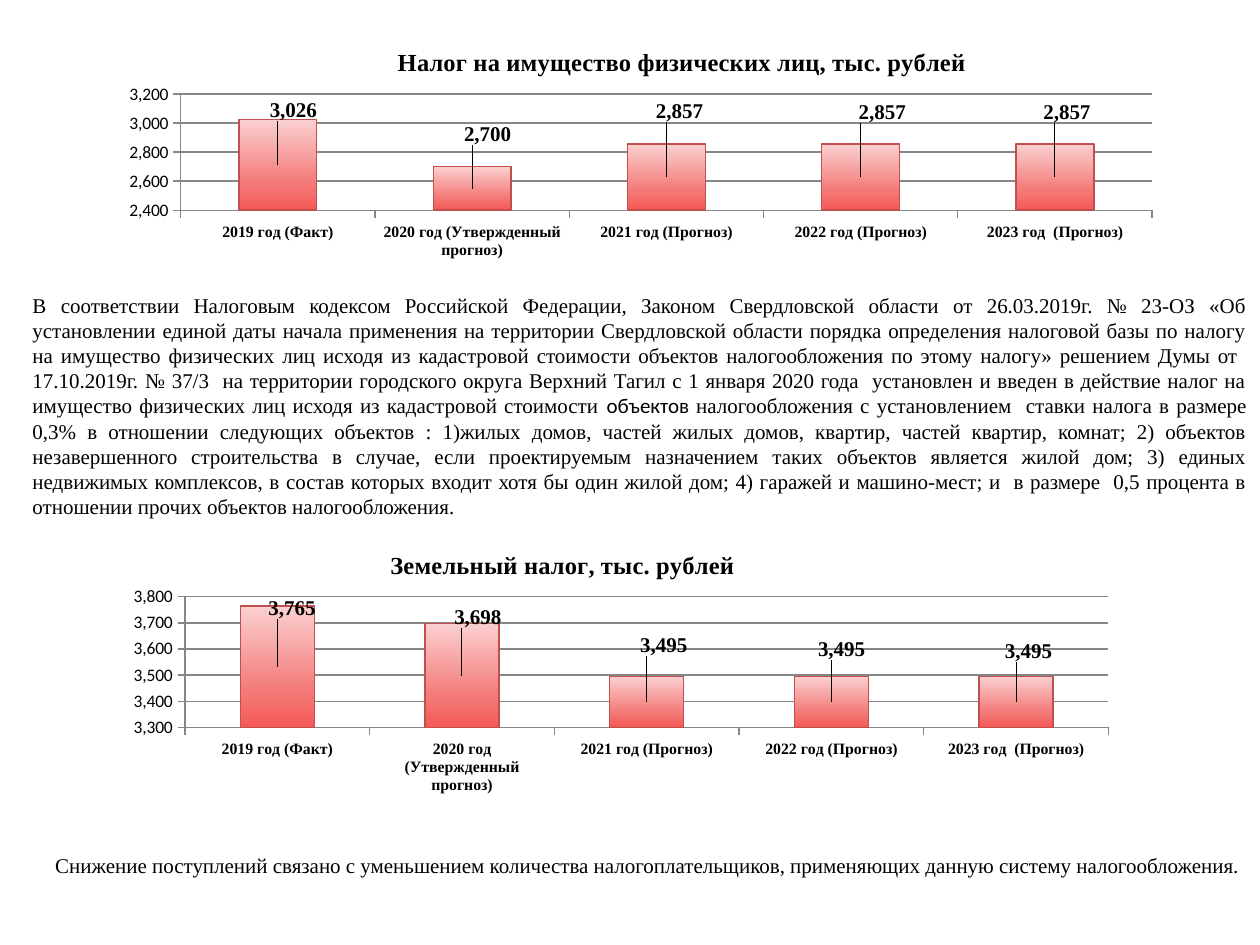
from lxml import etree
from pptx import Presentation
from pptx.chart.data import CategoryChartData
from pptx.dml.color import RGBColor
from pptx.enum import chart as ch, text
from pptx.oxml import parse_xml
from pptx.oxml.ns import nsdecls, qn
from pptx.util import Pt

BLACK = RGBColor(0, 0, 0)
BAR_LINE = RGBColor(0xC0, 0x50, 0x4D)
GRID = RGBColor(0x86, 0x86, 0x86)
BAR_STOPS = [
    (0, RGBColor(0xFB, 0xD0, 0xD0)),
    (72, RGBColor(0xF3, 0x78, 0x76)),
    (100, RGBColor(0xF5, 0x59, 0x56)),
]
SERIF = "Times New Roman"
SANS = "Calibri"
YEARS = [
    "2019 год (Факт)",
    "2020 год (Утвержденный прогноз)",
    "2021 год (Прогноз)",
    "2022 год (Прогноз)",
    "2023 год  (Прогноз)",
]
LAW_RUNS = [
    ("В соответствии Налоговым кодексом Российской Федерации, Законом Свердловской области "
     "от 26.03.2019г. № 23-ОЗ «Об установлении единой даты начала применения на территории "
     "Свердловской области порядка определения налоговой базы по налогу на имущество физических "
     "лиц исходя из кадастровой стоимости объектов налогообложения по этому налогу» решением "
     "Думы от  17.10.2019г. № 37/3  на территории городского округа Верхний Тагил с 1 января "
     "2020 года  установлен и введен в действие налог на имущество физических лиц исходя из "
     "кадастровой стоимости ", SERIF),
    ("объектов ", SANS),
    ("налогообложения с установлением  ставки налога в размере 0,3% в отношении следующих "
     "объектов : 1)жилых домов, частей жилых домов, квартир, частей квартир, комнат; "
     "2) объектов незавершенного строительства в случае, если проектируемым назначением таких "
     "объектов является жилой дом; 3) единых недвижимых комплексов, в состав которых входит "
     "хотя бы один жилой дом; 4) гаражей и машино-мест; и  в размере  0,5 процента в отношении "
     "прочих объектов налогообложения.", SERIF),
]
DECLINE_RUNS = [
    ("Снижение поступлений связано с уменьшением количества налогоплательщиков, "
     "применяющих данную систему налогообложения.", SERIF),
]


def set_font(font, size, name, bold=False):
    font.size = Pt(size)
    font.name = name
    font.bold = bold
    font.color.rgb = BLACK


def make_layout(x, y, w=None, h=None):
    layout = parse_xml(f"<c:layout {nsdecls('c')}><c:manualLayout/></c:layout>")
    values = []
    if w is not None:
        values.append(("layoutTarget", "inner"))
    if w is not None or h is None:
        values += [("xMode", "edge"), ("yMode", "edge")]
    values += [("x", x), ("y", y)]
    if w is not None:
        values += [("w", w), ("h", h)]
    for tag, value in values:
        etree.SubElement(layout[0], qn(f"c:{tag}")).set("val", str(value))
    return layout


def place(parent, layout, after=None):
    for old in parent.findall(qn("c:layout")):
        parent.remove(old)
    if after is None:
        parent.insert(0, layout)
    else:
        parent.find(qn(after)).addnext(layout)


def offset_layout(x, y):
    layout = make_layout(x, y)
    for tag in ("c:xMode", "c:yMode"):
        layout[0].remove(layout[0].find(qn(tag)))
    return layout


def fill_bars(series):
    series.format.line.color.rgb = BAR_LINE
    series.format.line.width = Pt(0.79)
    fill = series.format.fill
    fill.gradient()
    fill.gradient_angle = 270
    stops = series.format.element.find(".//" + qn("a:gsLst")) if hasattr(series.format, "element") \
        else next(series._element.iter(qn("a:gsLst")))
    for stop in list(stops):
        stops.remove(stop)
    for position, color in BAR_STOPS:
        stops.append(parse_xml(
            f'<a:gs {nsdecls("a")} pos="{position * 1000}"><a:srgbClr val="{color}"/></a:gs>'))


def style_axes(chart):
    category, value = chart.category_axis, chart.value_axis
    for axis in (category, value):
        axis.format.line.color.rgb = GRID
        axis.major_tick_mark = ch.XL_TICK_MARK.OUTSIDE
    set_font(category.tick_labels.font, 9, SERIF, True)
    set_font(value.tick_labels.font, 10, SANS)
    value.tick_labels.number_format = "#,##0"
    value.tick_labels.number_format_is_linked = False
    value.major_gridlines.format.line.color.rgb = GRID


def add_tax_chart(slide, box, title, values, scale, plot_box, offsets):
    data = CategoryChartData(number_format="#,##0")
    data.categories = YEARS
    data.add_series("Series 1", values)
    chart = slide.shapes.add_chart(
        ch.XL_CHART_TYPE.COLUMN_STACKED, *map(Pt, box), data).chart
    set_font(chart.font, 18, SANS)
    chart.has_legend = False
    chart.chart_title.text_frame.text = title
    set_font(chart.chart_title.text_frame.paragraphs[0].font, 14, SERIF, True)
    chart.chart_title.include_in_layout = False
    style_axes(chart)
    axis = chart.value_axis
    axis.minimum_scale, axis.maximum_scale, axis.major_unit = scale

    plot = chart.plots[0]
    plot.gap_width = 150
    plot.overlap = 100
    plot.vary_by_categories = False
    series = plot.series[0]
    fill_bars(series)
    labels = series.data_labels
    labels.show_value = True
    labels.number_format = "#,##0"
    labels.number_format_is_linked = False
    set_font(labels.font, 12, SERIF, True)
    for i in range(len(values)):
        set_font(series.points[i].data_label.font, 12, SERIF, True)

    root = chart.element
    place(next(root.iter(qn("c:title"))), make_layout(0.295, 0.08), "c:tx")
    place(next(root.iter(qn("c:plotArea"))), make_layout(*plot_box))
    for label, offset in zip(root.iter(qn("c:dLbl")), offsets):
        place(label, offset_layout(*offset), "c:idx")


def add_text(slide, box, runs, align, wrap=True):
    tf = slide.shapes.add_textbox(*map(Pt, box)).text_frame
    tf.word_wrap = wrap
    tf.auto_size = text.MSO_AUTO_SIZE.SHAPE_TO_FIT_TEXT
    p = tf.paragraphs[0]
    p.alignment = align
    p.font.size = Pt(12)
    p.font.color.rgb = BLACK
    for content, name in runs:
        r = p.add_run()
        r.text = content
        r.font.name = name


def main():
    prs = Presentation()
    prs.slide_width, prs.slide_height = Pt(720), Pt(540)
    slide = prs.slides.add_slide(prs.slide_layouts[6])
    add_tax_chart(
        slide, (22.3, 11.5, 686.2, 157.7), "Налог на имущество физических лиц, тыс. рублей",
        (3026, 2700, 2857, 2857, 2857), (2400, 3200, 200), (0.118, 0.268, 0.809, 0.421),
        [(0.013, -0.196), (0.013, -0.196), (0.011, -0.239), (0.018, -0.236), (0.01, -0.236)])
    add_tax_chart(
        slide, (28.1, 298.1, 652.3, 168.5), "Земельный налог, тыс. рублей",
        (3765, 3698, 3495, 3495, 3495), (3300, 3800, 100), (0.119, 0.255, 0.809, 0.443),
        [(0.013, -0.197), (0.014, -0.197), (0.015, -0.193), (0.009, -0.18), (0.011, -0.173)])
    add_text(slide, (11.5, 163.4, 708.5, 181.4), LAW_RUNS, text.PP_ALIGN.JUSTIFY)
    add_text(slide, (24.5, 483.8, 695.5, 21.6), DECLINE_RUNS, text.PP_ALIGN.LEFT, wrap=False)
    prs.save("out.pptx")


if __name__ == "__main__":
    main()
